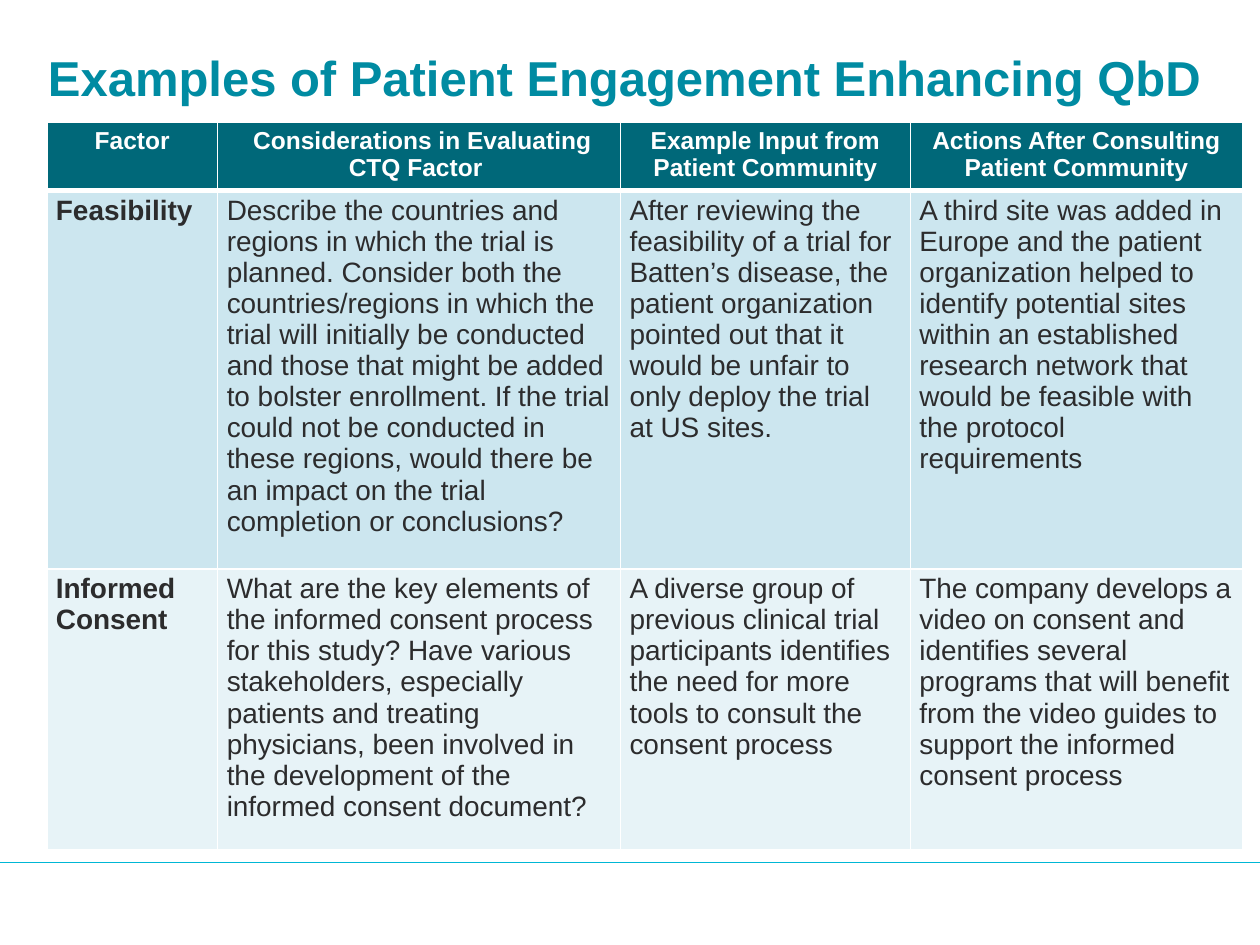
import pptx
import pptx.dml.color
import pptx.enum.shapes
import pptx.enum.text
import pptx.oxml
import pptx.oxml.ns
import pptx.util

Pt = pptx.util.Pt
RGBColor = pptx.dml.color.RGBColor
PP_ALIGN = pptx.enum.text.PP_ALIGN
MSO_ANCHOR = pptx.enum.text.MSO_ANCHOR

WHITE = RGBColor(0xFF, 0xFF, 0xFF)
TITLE_TEAL = RGBColor(0x00, 0x8B, 0xA2)
HEADER_TEAL = RGBColor(0x00, 0x68, 0x79)
RULE_CYAN = RGBColor(0x00, 0xB7, 0xD5)
BODY_GRAY = RGBColor(0x2C, 0x2C, 0x2D)
BAND_DARK = RGBColor(0xCC, 0xE6, 0xEF)
BAND_LIGHT = RGBColor(0xE7, 0xF3, 0xF7)

SLIDE_WIDTH, SLIDE_HEIGHT = 720, 540
COLUMN_WIDTHS = [97.6, 230.2, 165.6, 190]
ROW_HEIGHTS = [37.4, 201, 160.6]
ROW_FILLS = [HEADER_TEAL, BAND_DARK, BAND_LIGHT]
CELL_MARGINS = {
    "margin_left": Pt(5.2), "margin_right": Pt(5.2),
    "margin_top": Pt(2.6), "margin_bottom": Pt(2.6),
}
TITLE_FONT = {"name": "Arial", "size": Pt(28), "bold": True}
HEADER_FONT = {"name": "Arial", "size": Pt(14), "bold": True}
FACTOR_FONT = {"name": "Arial", "size": Pt(16), "bold": True}
BODY_FONT = {"name": "Arial", "size": Pt(16), "bold": False}

TABLE_ROWS = [
    [
        "Factor",
        " Considerations in Evaluating CTQ Factor ",
        "Example Input from Patient Community",
        "Actions After Consulting Patient Community",
    ],
    [
        "Feasibility",
        "Describe the countries and regions in which the trial is planned. "
        "Consider both the countries/regions in which the trial will initially "
        "be conducted and those that might be added to bolster enrollment. "
        "If the trial could not be conducted in these regions, would there be "
        "an impact on the trial completion or conclusions?",
        "After reviewing the feasibility of a trial for Batten’s disease, the "
        "patient organization pointed out that it would be unfair to only "
        "deploy the trial at US sites.",
        "A third site was added in Europe and the patient organization helped "
        "to identify potential sites within an established research network "
        "that would be feasible with the protocol requirements",
    ],
    [
        "Informed Consent",
        "What are the key elements of the informed consent process for this "
        "study? Have various stakeholders, especially patients and treating "
        "physicians, been involved in the development of the informed consent "
        "document?",
        "A diverse group of previous clinical trial participants identifies "
        "the need for more tools to consult the consent process",
        "The company develops a video on consent and identifies several "
        "programs that will benefit from the video guides to support the "
        "informed consent process",
    ],
]


def apply_format(target, values):
    for name, value in values.items():
        setattr(target, name, value)


def write_text(text_frame, text, font_values, color, alignment):
    paragraph = text_frame.paragraphs[0]
    paragraph.alignment = alignment
    run = paragraph.add_run()
    run.text = text
    apply_format(run.font, font_values)
    run.font.color.rgb = color


def add_footer(slide):
    band = slide.shapes.add_shape(
        pptx.enum.shapes.MSO_SHAPE.RECTANGLE,
        Pt(0), Pt(492), Pt(SLIDE_WIDTH), Pt(48))
    band.shadow.inherit = False
    band.fill.solid()
    band.fill.fore_color.rgb = WHITE
    band.line.fill.background()
    rule = slide.shapes.add_connector(
        pptx.enum.shapes.MSO_CONNECTOR.STRAIGHT,
        Pt(0), Pt(493), Pt(SLIDE_WIDTH), Pt(493))
    rule.line.color.rgb = RULE_CYAN
    rule.line.width = Pt(0.75)
    pptx.oxml.ns.qn("a:effectLst")
    rule.element.spPr.append(pptx.oxml.parse_xml(
        f"<a:effectLst {pptx.oxml.ns.nsdecls('a')}/>"))


def add_title(slide, text):
    title = slide.shapes.add_textbox(Pt(27.4), Pt(13), Pt(666), Pt(62))
    apply_format(title.text_frame, {
        "word_wrap": True, "vertical_anchor": MSO_ANCHOR.MIDDLE,
        "margin_left": 0, "margin_right": 0,
        "margin_top": 0, "margin_bottom": 0,
    })
    write_text(title.text_frame, text, TITLE_FONT, TITLE_TEAL, PP_ALIGN.LEFT)


def set_borders(cell, bottom_width):
    properties = cell._tc.get_or_add_tcPr()
    widths = {"lnL": 1, "lnR": 1, "lnT": 1, "lnB": bottom_width}
    for position, (side, width) in enumerate(widths.items()):
        properties.insert(position, pptx.oxml.parse_xml(
            f'<a:{side} {pptx.oxml.ns.nsdecls("a")} w="{int(Pt(width))}">'
            f'<a:solidFill><a:srgbClr val="{WHITE}"/></a:solidFill></a:{side}>'))


def format_cell(cell, text, row_index, column_index):
    is_header = row_index == 0
    apply_format(cell, CELL_MARGINS)
    cell.fill.solid()
    cell.fill.fore_color.rgb = ROW_FILLS[row_index]
    set_borders(cell, 3 if is_header else 1)
    if is_header:
        write_text(cell.text_frame, text, HEADER_FONT, WHITE, PP_ALIGN.CENTER)
    else:
        font_values = FACTOR_FONT if column_index == 0 else BODY_FONT
        write_text(cell.text_frame, text, font_values, BODY_GRAY, PP_ALIGN.LEFT)


def add_factor_table(slide):
    table = slide.shapes.add_table(
        len(ROW_HEIGHTS), len(COLUMN_WIDTHS), Pt(26.8), Pt(70),
        Pt(sum(COLUMN_WIDTHS)), Pt(sum(ROW_HEIGHTS))).table
    for column, width in zip(table.columns, COLUMN_WIDTHS):
        column.width = Pt(width)
    for row, height in zip(table.rows, ROW_HEIGHTS):
        row.height = Pt(height)
    for row_index, texts in enumerate(TABLE_ROWS):
        for column_index, text in enumerate(texts):
            cell = table.cell(row_index, column_index)
            format_cell(cell, text, row_index, column_index)


def main():
    presentation = pptx.Presentation()
    presentation.slide_width = Pt(SLIDE_WIDTH)
    presentation.slide_height = Pt(SLIDE_HEIGHT)
    slide = presentation.slides.add_slide(presentation.slide_layouts[6])
    add_footer(slide)
    add_title(slide, "Examples of Patient Engagement Enhancing QbD")
    add_factor_table(slide)
    presentation.save("out.pptx")


if __name__ == "__main__":
    main()
